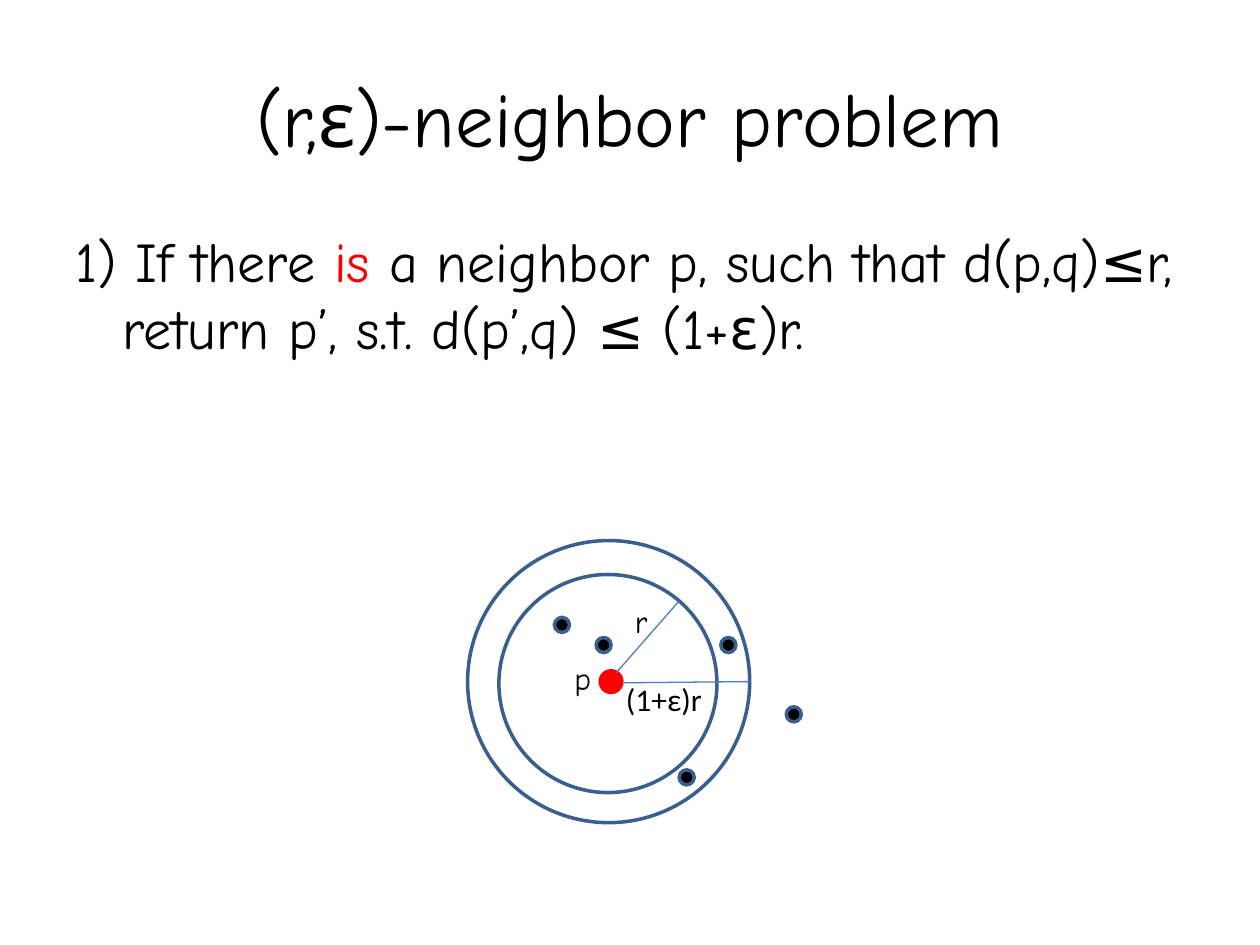
import dataclasses
import typing

import pptx
import pptx.dml.color
import pptx.enum.shapes
import pptx.enum.text
import pptx.oxml.ns
import pptx.util
import lxml.etree

Pt = pptx.util.Pt
Color = pptx.dml.color.RGBColor
Align = pptx.enum.text.PP_ALIGN
Anchor = pptx.enum.text.MSO_ANCHOR
Fit = pptx.enum.text.MSO_AUTO_SIZE
Kind = pptx.enum.shapes.MSO_SHAPE
Link = pptx.enum.shapes.MSO_CONNECTOR


@dataclasses.dataclass(frozen=True)
class Theme:
    ink: str = "000000"
    red: str = "FF0000"
    rim: str = "3A5F8C"
    ray: str = "4B7EBC"
    hand: str = "Comic Neue"
    sans: str = "Calibri"
    title: float = 44
    body: float = 32
    label: float = 18
    thick: float = 2
    thin: float = 0.75


THEME = Theme()


@dataclasses.dataclass(frozen=True)
class Disc:
    x: float  # centre
    y: float
    rad: float
    fill: typing.Optional[str] = None
    rim: typing.Optional[str] = THEME.rim


@dataclasses.dataclass(frozen=True)
class Ray:
    x1: float
    y1: float
    x2: float
    y2: float


@dataclasses.dataclass(frozen=True)
class Label:
    text: str
    left: float
    top: float
    width: float
    font: str = THEME.hand


def write(frame, *parts, size: float, font: str = THEME.hand,
          align=Align.LEFT, anchor=Anchor.TOP, hang: float = 0,
          before: float = 0, fit=Fit.NONE) -> None:
    """Fill a frame with one paragraph of (text, colour) parts."""
    frame.word_wrap = True
    frame.auto_size = fit
    frame.vertical_anchor = anchor
    para = frame.paragraphs[0]
    para.alignment = align
    para.space_before = Pt(before)
    if hang:
        props = para._p.get_or_add_pPr()
        props.set("marL", str(Pt(hang)))
        props.set("indent", str(-Pt(hang)))
    for text, color in parts:
        run = para.add_run()
        run.text = text
        run.font.size = Pt(size)
        run.font.name = font
        run.font.color.rgb = Color.from_string(color)


def draw_disc(group, disc: Disc) -> None:
    side = Pt(2 * disc.rad)
    shape = group.shapes.add_shape(
        Kind.OVAL, Pt(disc.x - disc.rad), Pt(disc.y - disc.rad), side, side)
    shape.shadow.inherit = False
    if disc.fill:
        shape.fill.solid()
        shape.fill.fore_color.rgb = Color.from_string(disc.fill)
    else:
        shape.fill.background()
    if disc.rim:
        shape.line.color.rgb = Color.from_string(disc.rim)
        shape.line.width = Pt(THEME.thick)
    else:
        shape.line.fill.background()


def draw_ray(group, ray: Ray) -> None:
    line = group.shapes.add_connector(
        Link.STRAIGHT, Pt(ray.x1), Pt(ray.y1), Pt(ray.x2), Pt(ray.y2))
    line.line.color.rgb = Color.from_string(THEME.ray)
    line.line.width = Pt(THEME.thin)
    lxml.etree.SubElement(line._element.spPr, pptx.oxml.ns.qn("a:effectLst"))


def draw_label(group, label: Label) -> None:
    box = group.shapes.add_textbox(
        Pt(label.left), Pt(label.top), Pt(label.width), Pt(29))
    write(box.text_frame, (label.text, THEME.ink), size=THEME.label,
          font=label.font, fit=Fit.SHAPE_TO_FIT_TEXT)


# Query point, then the circles of radius r and (1+ε)r
DISCS = [
    Disc(349.2, 389.5, 7.2, THEME.red, None),
    Disc(347.4, 390.6, 62.3),
    Disc(347.8, 389.5, 80.6),
]
RAYS = [Ray(352.1, 384.5, 388.1, 343.4), Ray(355.7, 390.2, 428.4, 389.5)]
LABELS = [
    Label("r", 355.7, 340.6, 40.3),
    Label("(1+ε)r", 350.6, 385.2, 72, THEME.sans),
    Label("p", 321.1, 373, 40.3),
]
# Centres of the neighbor points
DOTS = [(321.1, 357.1), (344.9, 368.6), (416.2, 368.6),
        (453.6, 408.2), (392.4, 444.2)]


def main() -> None:
    deck = pptx.Presentation()
    deck.slide_width, deck.slide_height = Pt(720), Pt(540)
    slide = deck.slides.add_slide(deck.slide_layouts[5])

    # Title
    title = slide.shapes.title
    title.left, title.top = Pt(36), Pt(21.6)
    title.width, title.height = Pt(648), Pt(90)
    write(title.text_frame, ("(r,ε)-neighbor problem", THEME.ink),
          size=THEME.title, align=Align.CENTER, anchor=Anchor.MIDDLE)

    # Statement
    body = slide.shapes.add_textbox(Pt(36), Pt(126), Pt(672.5), Pt(356.4))
    write(body.text_frame, ("1) If there ", THEME.ink), ("is", THEME.red),
          (" a neighbor p, such that d(p,q)≤r, "
           "return p’, s.t. d(p’,q) ≤ (1+ε)r.", THEME.ink),
          size=THEME.body, hang=27, before=0.2 * THEME.body)

    # Diagram
    group = slide.shapes.add_group_shape()
    for disc in DISCS:
        draw_disc(group, disc)
    for ray in RAYS:
        draw_ray(group, ray)
    for label in LABELS:
        draw_label(group, label)
    for x, y in DOTS:
        draw_disc(group, Disc(x, y, 4.3, THEME.ink))

    deck.save("out.pptx")


if __name__ == "__main__":
    main()
